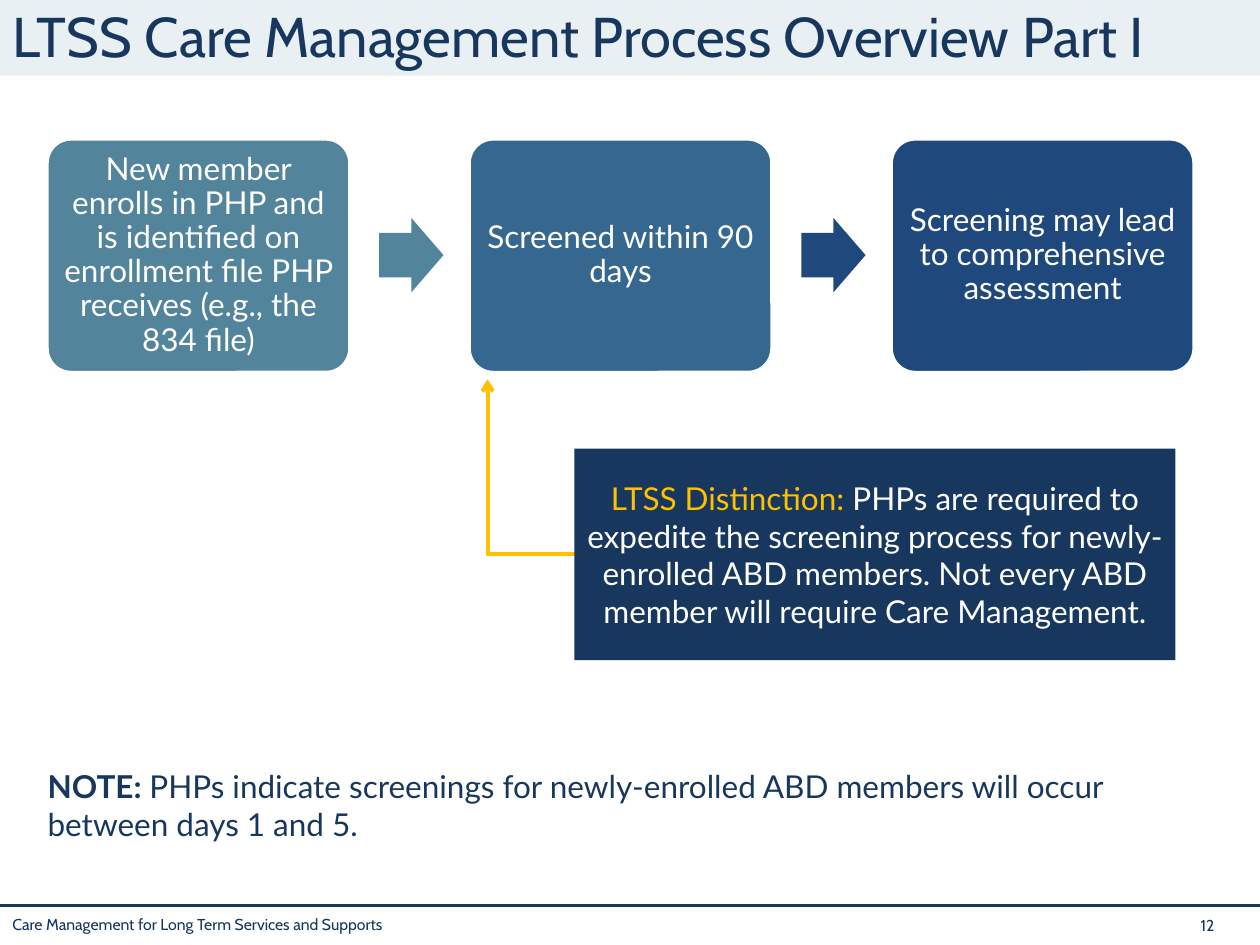
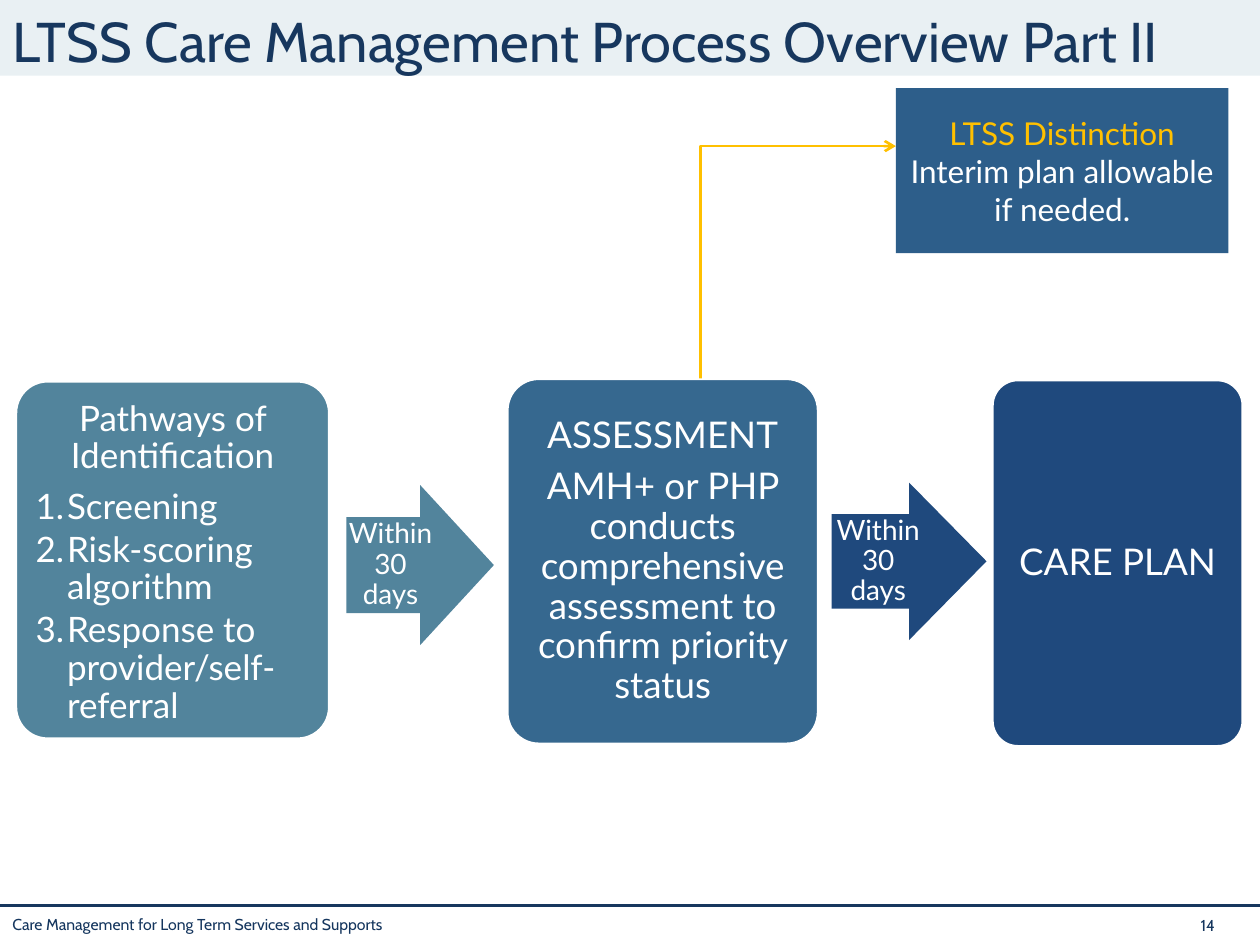
from pptx import Presentation
from pptx.dml.color import RGBColor
from pptx.enum.shapes import MSO_CONNECTOR, MSO_SHAPE
from pptx.enum.text import MSO_ANCHOR, PP_ALIGN
from pptx.oxml.ns import qn
from pptx.util import Inches, Pt
from lxml import etree

RECT, ROUND, ARROW = MSO_SHAPE.RECTANGLE, MSO_SHAPE.ROUNDED_RECTANGLE, MSO_SHAPE.RIGHT_ARROW
STRAIGHT, ELBOW = MSO_CONNECTOR.STRAIGHT, MSO_CONNECTOR.ELBOW
LEFT, CENTER = PP_ALIGN.LEFT, PP_ALIGN.CENTER
TOP, MIDDLE = MSO_ANCHOR.TOP, MSO_ANCHOR.MIDDLE

NAVY, FOOT, PALE, GOLD, WHITE = "17375E", "15365E", "E9F0F3", "FFC000", "FFFFFF"
TEAL, STEEL, BLUE, CALLOUT = "52849C", "36688F", "1F497D", "2D5E8A"
HEAD, BODY = "Cabin", "Lato"
ADJUSTMENTS = {RECT: [], ROUND: [0.1], ARROW: [0.6, 0.5]}

rgb = RGBColor.from_string


def add_box(s, kind, at, fill=None, inset=None, anchor=MIDDLE):
    """Add a preset shape, or a text box when kind is None; inset is one length or four."""
    at = [Inches(v) for v in at]
    if kind is None:
        sp = s.shapes.add_textbox(*at)
    else:
        sp = s.shapes.add_shape(kind, *at)
        sp.shadow.inherit = False
        sp.fill.solid()
        sp.fill.fore_color.rgb = rgb(fill)
        for i, value in enumerate(ADJUSTMENTS[kind]):
            sp.adjustments[i] = value
        if kind == ROUND:
            sp.line.color.rgb = rgb(WHITE)
            sp.line.width = Pt(1)
        else:
            sp.line.fill.background()
    tf = sp.text_frame
    tf.word_wrap = True
    tf.vertical_anchor = anchor
    if inset is not None:
        sides = inset if isinstance(inset, tuple) else (inset,) * 4
        (tf.margin_left, tf.margin_top, tf.margin_right,
         tf.margin_bottom) = [Inches(v) for v in sides]
    return sp


def write(sp, runs, size, font=BODY, align=CENTER, spacing=None, after=None):
    """Add one paragraph of (text, colour, bold) runs, using the first one while it is empty."""
    tf = sp.text_frame
    p = tf.add_paragraph() if tf.text else tf.paragraphs[0]
    p.alignment = align
    if spacing:
        p.line_spacing = spacing
        p.space_after = Pt(after)
    for text, color, bold in runs:
        r = p.add_run()
        r.text = text
        r.font.size = Pt(size)
        r.font.name = font
        r.font.bold = bold
        r.font.color.rgb = rgb(color)
    return p


prs = Presentation()
prs.slide_width, prs.slide_height = Inches(10), Inches(7.5)

# Title, band, rule and footer of every slide
slides = []
for part, title_top, number in [("I", -0.04, "12"), ("II", 0, "14")]:
    s = prs.slides.add_slide(prs.slide_layouts[5])
    title = s.shapes.title
    title.left, title.top = Inches(0), Inches(title_top)
    title.width, title.height = Inches(9.66), Inches(0.59)
    title.text_frame.vertical_anchor = TOP
    write(title, [(f"LTSS Care Management Process Overview Part {part}", NAVY, False)],
          32, HEAD, LEFT)
    band = add_box(s, RECT, (0, 0, 10, 0.6), PALE)
    title.element.addprevious(band.element)

    rule = s.shapes.add_connector(STRAIGHT, Inches(0), Inches(7.19), Inches(10), Inches(7.19))
    rule.line.color.rgb = rgb(NAVY)
    rule.line.width = Pt(1.75)
    etree.SubElement(rule.element.spPr, qn("a:effectLst"))

    for at, text in [((0, 7.21, 8.74, 0.29), "Care Management for Long Term Services and Supports"),
                     ((9.43, 7.22, 0.44, 0.3), number)]:
        write(add_box(s, None, at, anchor=TOP), [(text, FOOT, False)], 9, HEAD, LEFT)
    slides.append(s)
overview, pathways = slides

# Gold elbow arrows, placed first so that the boxes cover their ends
for s, ends, width, preset, bend in [
        (overview, (4.56, 4.4, 3.87, 3.01), 2.25, "bentConnector2", None),
        (pathways, (5.12, 3.05, 7.11, 1.16), 1.5, "bentConnector3", 22100)]:
    link = s.shapes.add_connector(ELBOW, *[Inches(v) for v in ends])
    link.line.color.rgb = rgb(GOLD)
    link.line.width = Pt(width)
    spPr = link.element.spPr
    etree.SubElement(spPr.find(qn("a:ln")), qn("a:tailEnd"), type="arrow")
    etree.SubElement(spPr, qn("a:effectLst"))
    geom = spPr.find(qn("a:prstGeom"))
    geom.set("prst", preset)
    if bend:
        etree.SubElement(geom.find(qn("a:avLst")), qn("a:gd"), name="adj1", fmla=f"val {bend}")

# Part I: three equal steps with arrows between them
steps = [
    ("New member enrolls in PHP and is identified on enrollment file PHP receives "
     "(e.g., the 834 file)", TEAL),
    ("Screened within 90 days", STEEL),
    ("Screening may lead to comprehensive assessment", BLUE),
]
arrow_fills = [TEAL, BLUE]
STEP_LEFT, STEP_PITCH = 0.38, 3.35
for i, (text, fill) in enumerate(steps):
    left = STEP_LEFT + i * STEP_PITCH
    step = add_box(overview, ROUND, (left, 1.11, 2.39, 1.84), fill, 0.07)
    write(step, [(text, WHITE, False)], 18, spacing=0.9, after=7)
    if i < len(arrow_fills):
        add_box(overview, ARROW, (left + 2.63, 1.73, 0.51, 0.59), arrow_fills[i])

distinction = add_box(overview, RECT, (4.56, 3.56, 4.77, 1.68), NAVY)
write(distinction, [
    ("LTSS Distinction: ", GOLD, False),
    ("PHPs are required to expedite the screening process for newly-enrolled ABD members. "
     "Not every ABD member will require Care Management.", WHITE, False)], 18)

note = add_box(overview, None, (0.28, 6.04, 9.54, 0.71), anchor=TOP)
write(note, [
    ("NOTE: ", NAVY, True),
    ("PHPs indicate screenings for newly-enrolled ABD members will occur "
     "between days 1 and 5.", NAVY, False)], 18, align=LEFT)

# Part II: identification, assessment, care plan
identification = add_box(pathways, ROUND, (0.13, 3.03, 2.48, 2.83), TEAL, 0.08, TOP)
write(identification, [("Pathways of Identification", WHITE, False)], 20, spacing=0.9, after=7)
for text in ["Screening", "Risk-scoring algorithm", "Response to provider/self-referral"]:
    p = write(identification, [(text, WHITE, False)], 20, align=LEFT, spacing=0.9, after=3)
    pPr = p._p.get_or_add_pPr()
    pPr.set("marL", str(Inches(0.25)))
    pPr.set("indent", str(-Inches(0.25)))
    bullet_color = etree.SubElement(pPr, qn("a:buClr"))
    etree.SubElement(bullet_color, qn("a:srgbClr"), val=WHITE)
    etree.SubElement(pPr, qn("a:buAutoNum"), type="arabicPeriod")

stages = [
    ((4.03, 3.01, 2.46, 2.89), STEEL,
     ["ASSESSMENT", "AMH+ or PHP conducts comprehensive assessment to confirm priority status"]),
    ((7.88, 3.02, 1.98, 2.9), BLUE, ["CARE PLAN"]),
]
for at, fill, paragraphs in stages:
    stage = add_box(pathways, ROUND, at, fill, 0.09)
    for text in paragraphs:
        write(stage, [(text, WHITE, False)], 21, spacing=0.9, after=7)

for at, fill in [((2.75, 3.85, 1.17, 1.27), TEAL), ((6.6, 3.83, 1.23, 1.25), BLUE)]:
    deadline = add_box(pathways, ARROW, at, fill, (0, 0, 0.12, 0))
    write(deadline, [("Within 30 days", WHITE, False)], 16, spacing=0.9, after=6)

interim = add_box(pathways, RECT, (7.11, 0.7, 2.64, 1.31), CALLOUT, 0.05)
write(interim, [("LTSS Distinction ", GOLD, False),
                ("Interim plan allowable if needed.", WHITE, False)], 18)

prs.save("out.pptx")
